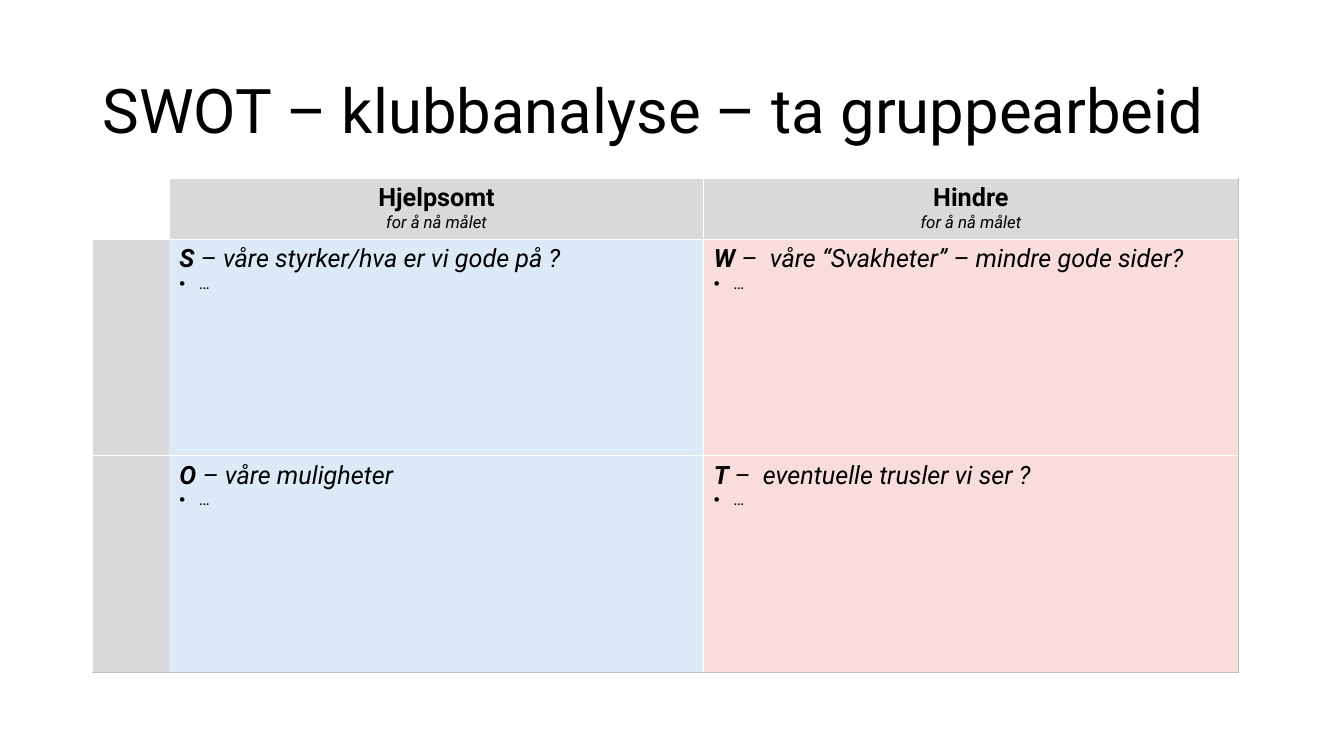
import pptx
import pptx.dml.color
import pptx.enum.text
import pptx.oxml
import pptx.oxml.ns
import pptx.util
from pptx.util import Inches

TITLE = "SWOT – klubbanalyse – ta gruppearbeid"
HEADINGS = ["Hjelpsomt", "Hindre"]
HEADING_NOTE = "for å nå målet"
QUADRANTS = [
    [("S ", "– våre styrker/hva er vi gode på ?"),
     ("W ", "–  våre “Svakheter” – mindre gode sider?")],
    [("O ", "– våre muligheter"),
     ("T ", "–  eventuelle trusler vi ser ?")],
]
PLACEHOLDER = "…"

THEME = {
    "font": "Roboto",
    "text": "000000",
    "header": "D9D9D9",
    "quadrants": ["DCEAF7", "F8DDDC"],
    "grid": "FFFFFF",
    "outline": "BFBFBF",
    "title_size": 44,
    "heading_size": 18,
    "note_size": 12,
}
COLUMN_WIDTHS = [0.76, 5.3, 5.3]
ROW_HEIGHTS = [0.59, 2.15, 2.15]
LEFT, TABLE_TOP = 0.92, 1.77
BULLET_INDENT = Inches(0.2)


def color(value):
    return pptx.dml.color.RGBColor.from_string(value)


def set_font(paragraph, size, bold=None, italic=None):
    font = paragraph.font
    font.name = THEME["font"]
    font.size = pptx.util.Pt(size)
    font.color.rgb = color(THEME["text"])
    font.bold = bold
    font.italic = italic


def add_xml(parent, markup):
    namespace = pptx.oxml.ns.nsdecls("a")
    parent.append(pptx.oxml.parse_xml(markup.replace(" ", f" {namespace} ", 1)))


def style_cell(cell, row, column, fill):
    """Draw the white grid with grey right and bottom outlines, then the fill."""
    last_row = row == len(ROW_HEIGHTS) - 1
    last_column = column == len(COLUMN_WIDTHS) - 1
    edges = {
        "L": (THEME["grid"], 1 if column < 2 else 0.5),
        "R": (THEME["outline" if last_column else "grid"], 0.5),
        "T": (THEME["grid"], 1 if row == 0 else 0.5),
        "B": (THEME["outline" if last_row else "grid"], 0.5),
    }
    properties = cell._tc.get_or_add_tcPr()
    for side, (line_color, width) in edges.items():
        # The row headers run into the quadrants without a line between.
        bare = row > 0 and (column, side) in [(0, "R"), (1, "L")]
        paint = ("<a:noFill/>" if bare else
                 f'<a:solidFill><a:srgbClr val="{line_color}"/></a:solidFill>')
        add_xml(properties, f'<a:ln{side} w="{pptx.util.Pt(width)}">{paint}</a:ln{side}>')
    if fill:
        cell.fill.solid()
        cell.fill.fore_color.rgb = color(fill)
    else:
        cell.fill.background()


def fill_heading(cell, heading):
    name = cell.text_frame.paragraphs[0]
    note = cell.text_frame.add_paragraph()
    name.text, note.text = heading, HEADING_NOTE
    set_font(name, THEME["heading_size"], bold=True, italic=False)
    set_font(note, THEME["note_size"], bold=False, italic=True)
    for paragraph in (name, note):
        paragraph.alignment = pptx.enum.text.PP_ALIGN.CENTER


def fill_quadrant(cell, letter, question):
    lead = cell.text_frame.paragraphs[0]
    set_font(lead, THEME["heading_size"], italic=True)
    for text, bold in ((letter, True), (question, False)):
        run = lead.add_run()
        run.text = text
        run.font.bold = bold

    item = cell.text_frame.add_paragraph()
    item.text = PLACEHOLDER
    properties = item._p.get_or_add_pPr()
    properties.set("marL", str(BULLET_INDENT))
    properties.set("indent", str(-BULLET_INDENT))
    add_xml(properties, '<a:buFont typeface="Arial"/>')
    add_xml(properties, '<a:buChar char="•"/>')
    set_font(item, THEME["note_size"], bold=False, italic=True)


def add_title(slide):
    box = slide.shapes.add_textbox(Inches(LEFT), Inches(0.4), Inches(11.5), Inches(1.45))
    frame = box.text_frame
    frame.word_wrap = True
    frame.vertical_anchor = pptx.enum.text.MSO_ANCHOR.MIDDLE
    title = frame.paragraphs[0]
    title.text = TITLE
    title.line_spacing = 0.9
    set_font(title, THEME["title_size"])


def add_swot(slide):
    table = slide.shapes.add_table(
        len(ROW_HEIGHTS), len(COLUMN_WIDTHS), Inches(LEFT), Inches(TABLE_TOP),
        Inches(sum(COLUMN_WIDTHS)), Inches(sum(ROW_HEIGHTS))).table
    table.first_row = table.horz_banding = False
    for column, width in zip(table.columns, COLUMN_WIDTHS):
        column.width = Inches(width)
    for row, height in zip(table.rows, ROW_HEIGHTS):
        row.height = Inches(height)

    for row in range(len(ROW_HEIGHTS)):
        for column in range(len(COLUMN_WIDTHS)):
            cell = table.cell(row, column)
            if row == 0 and column == 0:
                fill = None
            elif row == 0 or column == 0:
                fill = THEME["header"]
            else:
                fill = THEME["quadrants"][column - 1]
            style_cell(cell, row, column, fill)
            if column and row == 0:
                fill_heading(cell, HEADINGS[column - 1])
            elif column:
                fill_quadrant(cell, *QUADRANTS[row - 1][column - 1])


def main():
    deck = pptx.Presentation()
    deck.slide_width, deck.slide_height = Inches(13.33), Inches(7.5)
    slide = deck.slides.add_slide(deck.slide_layouts[6])
    add_title(slide)
    add_swot(slide)
    deck.save("out.pptx")


if __name__ == "__main__":
    main()
